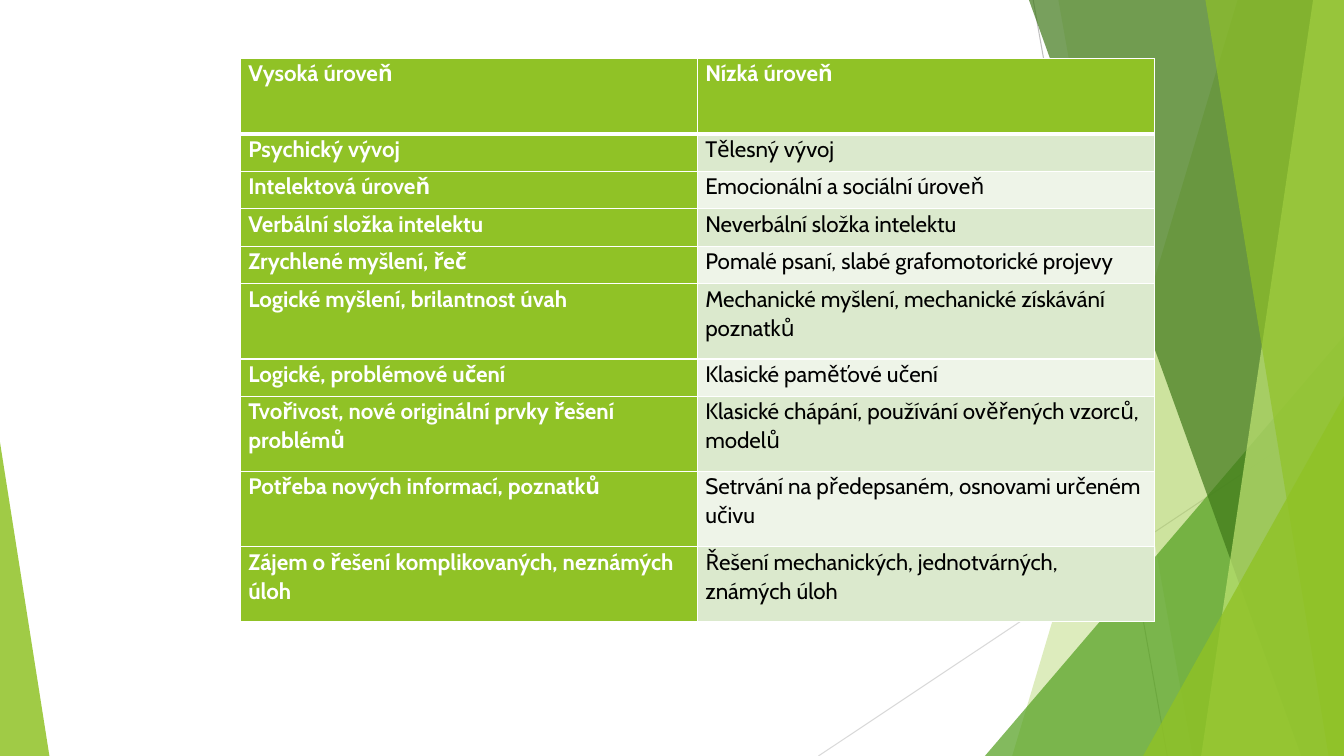
"""Build the slide comparing high-level and low-level traits in a two-column table."""
from dataclasses import dataclass

from lxml.etree import SubElement
from pptx import Presentation
from pptx.dml.color import RGBColor
from pptx.enum.shapes import MSO_CONNECTOR, MSO_SHAPE
from pptx.oxml.ns import qn
from pptx.shapes.autoshape import Shape
from pptx.slide import Slide
from pptx.table import _Cell
from pptx.util import Pt

WIDTH, HEIGHT = 960, 540
COLORS = {
    "lime": "90C226",
    "green": "54A021",
    "forest": "3F7819",
    "pale": "C0E474",
    "band_dark": "DBE9CD",
    "band_light": "EEF4E8",
    "ray_dark": "BFBFBF",
    "ray_light": "D9D9D9",
    "white": "FFFFFF",
    "black": "000000",
}
FONT = "Cabin"
TABLE_LEFT, TABLE_TOP = 172, 41.8
COLUMN_WIDTH = 326.4
ROW_UNIT = 26.83


@dataclass(frozen=True)
class Ray:
    """Thin straight line behind the facets."""
    start: tuple[float, float]
    end: tuple[float, float]
    color: str


@dataclass(frozen=True)
class Facet:
    """Full-height pane between a slanted left side and the right slide edge."""
    top_x: float
    bottom_x: float
    color: str
    opacity: int


@dataclass(frozen=True)
class Peak:
    """Triangle standing on the bottom slide edge."""
    left: float
    top: float
    width: float
    apex: float
    color: str
    opacity: int


@dataclass(frozen=True)
class Trait:
    """Table row pairing a high level with a low level."""
    high: str
    low: str
    units: int = 1


RAYS = [
    Ray((738, 0), (833.8, HEIGHT), "ray_dark"),
    Ray((WIDTH, 290), (584.6, HEIGHT), "ray_light"),
]
PANES = [
    Facet(884, 723, "lime", 30),
    Facet(756, 851.8, "lime", 20),
    Peak(703.5, 240, 256.5, 1, "green", 72),
    Facet(735, 929.5, "forest", 70),
    Facet(938, 858, "pale", 70),
    Facet(861, 949, "lime", 65),
    Peak(816.5, 283, 143.5, 1, "lime", 80),
    Peak(0, 316, 35.3, 0, "lime", 85),
]
TRAITS = [
    Trait("Vysoká úroveň", "Nízká úroveň", 2),
    Trait("Psychický vývoj", "Tělesný vývoj"),
    Trait("Intelektová úroveň", "Emocionální a sociální úroveň"),
    Trait("Verbální složka intelektu", "Neverbální složka intelektu"),
    Trait("Zrychlené myšlení, řeč", "Pomalé psaní, slabé grafomotorické projevy"),
    Trait("Logické myšlení, brilantnost úvah",
          "Mechanické myšlení, mechanické získávání poznatků", 2),
    Trait("Logické, problémové učení", "Klasické paměťové učení"),
    Trait("Tvořivost, nové originální prvky řešení problémů",
          "Klasické chápání, používání ověřených vzorců, modelů", 2),
    Trait("Potřeba nových informací, poznatků",
          "Setrvání na předepsaném, osnovami určeném učivu", 2),
    Trait("Zájem o řešení komplikovaných, neznámých úloh",
          "Řešení mechanických, jednotvárných, známých úloh", 2),
]


def rgb(name: str) -> RGBColor:
    """Return the named colour."""
    return RGBColor.from_string(COLORS[name])


def draw_ray(slide: Slide, ray: Ray) -> None:
    """Draw one thin line without a shadow."""
    line = slide.shapes.add_connector(
        MSO_CONNECTOR.STRAIGHT, *map(Pt, ray.start + ray.end))
    line.line.color.rgb = rgb(ray.color)
    line.line.width = Pt(0.75)
    SubElement(line.element.spPr, qn("a:effectLst"))


def outline_facet(slide: Slide, facet: Facet) -> Shape:
    """Add the outline of a facet."""
    builder = slide.shapes.build_freeform(Pt(facet.top_x), Pt(0))
    corners = [(WIDTH, 0), (WIDTH, HEIGHT), (facet.bottom_x, HEIGHT)]
    builder.add_line_segments([(Pt(x), Pt(y)) for x, y in corners], close=True)
    return builder.convert_to_shape()


def outline_peak(slide: Slide, peak: Peak) -> Shape:
    """Add the outline of a peak."""
    triangle = slide.shapes.add_shape(
        MSO_SHAPE.ISOSCELES_TRIANGLE, Pt(peak.left), Pt(peak.top),
        Pt(peak.width), Pt(HEIGHT - peak.top))
    triangle.adjustments[0] = peak.apex
    return triangle


def draw_pane(slide: Slide, pane: Facet | Peak) -> None:
    """Draw one translucent pane."""
    outline = outline_facet if isinstance(pane, Facet) else outline_peak
    glass = outline(slide, pane)
    glass.shadow.inherit = False
    glass.line.fill.background()
    glass.fill.solid()
    glass.fill.fore_color.rgb = rgb(pane.color)
    tint = glass.element.spPr.find(qn("a:solidFill")).find(qn("a:srgbClr"))
    SubElement(tint, qn("a:alpha"), val=str(pane.opacity * 1000))


def set_borders(cell: _Cell, top: float, bottom: float) -> None:
    """Give a cell white borders, one point wide at the sides."""
    properties = cell._tc.get_or_add_tcPr()
    widths = {"a:lnL": 1, "a:lnR": 1, "a:lnT": top, "a:lnB": bottom}
    for position, (side, width) in enumerate(widths.items()):
        border = SubElement(properties, qn(side), w=str(Pt(width)))
        fill = SubElement(border, qn("a:solidFill"))
        SubElement(fill, qn("a:srgbClr"), val=COLORS["white"])
        properties.insert(position, border)


def fill_cell(cell: _Cell, wording: str, fill: str, strong: bool) -> None:
    """Write and format one cell."""
    cell.margin_left = cell.margin_right = Pt(5.4)
    cell.margin_top = cell.margin_bottom = Pt(0)
    cell.fill.solid()
    cell.fill.fore_color.rgb = rgb(fill)
    cell.text_frame.text = wording
    paragraph = cell.text_frame.paragraphs[0]
    paragraph.line_spacing = 1.07
    font = paragraph.runs[0].font
    font.name, font.size, font.bold = FONT, Pt(16), strong
    font.color.rgb = rgb("white" if strong else "black")


def draw_traits(slide: Slide) -> None:
    """Draw the table of traits."""
    units = sum(trait.units for trait in TRAITS)
    table = slide.shapes.add_table(
        len(TRAITS), 2, Pt(TABLE_LEFT), Pt(TABLE_TOP),
        Pt(2 * COLUMN_WIDTH), Pt(units * ROW_UNIT)).table
    for row, trait in enumerate(TRAITS):
        table.rows[row].height = Pt(trait.units * ROW_UNIT)
        band = "band_dark" if row % 2 else "band_light"
        for column, wording in enumerate((trait.high, trait.low)):
            strong = row == 0 or column == 0
            cell = table.cell(row, column)
            fill_cell(cell, wording, "lime" if strong else band, strong)
            set_borders(cell, 3 if row == 1 else 1, 3 if row == 0 else 1)


def main() -> None:
    """Build and save the presentation."""
    presentation = Presentation()
    presentation.slide_width, presentation.slide_height = Pt(WIDTH), Pt(HEIGHT)
    slide = presentation.slides.add_slide(presentation.slide_layouts[6])
    for ray in RAYS:
        draw_ray(slide, ray)
    for pane in PANES:
        draw_pane(slide, pane)
    draw_traits(slide)
    presentation.save("out.pptx")


if __name__ == "__main__":
    main()
